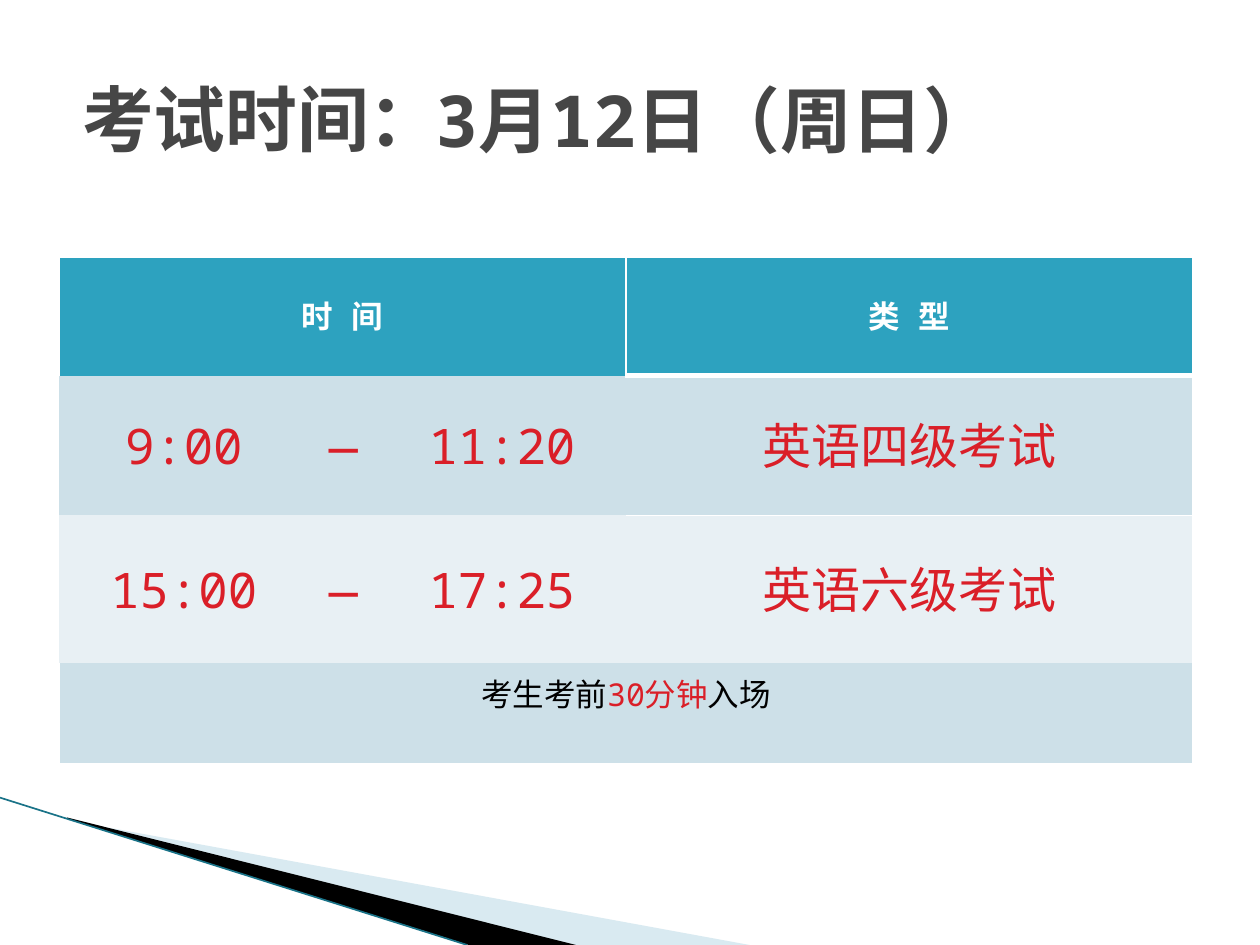
"""Build a slide with the exam timetable for 12 March."""
import pptx
import pptx.dml.color
import pptx.enum.shapes
import pptx.enum.text
import pptx.oxml
import pptx.oxml.ns
import pptx.util
from lxml import etree

Cm = pptx.util.Cm
Pt = pptx.util.Pt
ALIGN = pptx.enum.text.PP_ALIGN
MIDDLE = pptx.enum.text.MSO_ANCHOR.MIDDLE
FONT = "Noto Sans Mono"
WHITE, BLACK, GREY, RED = "FFFFFF", "000000", "464646", "DA1F28"
TEAL, BAND, PALE = "2DA2BF", "CDE0E8", "E8F0F4"

TITLE = "考试时间："
DATE = "3月12日（周日）"
HEAD = ["时 间", None, None, "类 型"]
SLOTS = [
    ["9:00", "—", "11:20", "英语四级考试"],
    ["15:00", "—", "17:25", "英语六级考试"],
]
NOTE = [("考生考前", BLACK), ("30分钟", RED), ("入场", BLACK)]
COLS = [5.03, 1.4, 5, 11.43]
ROWS = [2.39, 2.82, 2.97, 2.03]
FILLS = [TEAL, BAND, PALE, BAND]
EDGES = [
    [{"L": 1, "T": 1, "R": 1}] * 3 + [{"L": 1, "T": 1, "R": 1, "B": 3}],
    [{}] * 3 + [{"T": 3, "R": 1, "B": 1}],
    [{}] + [{"B": 1}] * 2 + [{"T": 1, "R": 1, "B": 1}],
    [{"L": 1, "R": 1, "B": 1}] * 4,
]
WEDGES = [
    ("A0CBDC", 40, [(1.4, 16.54), (15.11, 19.05), (11.58, 19.05), (1.4, 16.51)]),
    (BLACK, 100, [(1.35, 16.48), (11.61, 19.05), (9.45, 19.05), (1.37, 16.51)]),
]


def rgb(code):
    return pptx.dml.color.RGBColor.from_string(code)


def write(frame, text, size=18, color=BLACK, bold=False, align=ALIGN.CENTER):
    para = frame.paragraphs[0]
    para.alignment = align
    for part, tint in [(text, color)] if isinstance(text, str) else text:
        run = para.add_run()
        run.text = part
        font = run.font
        font.name, font.size, font.bold = FONT, Pt(size), bold
        font.color.rgb = rgb(tint)
        for tag in ("a:ea", "a:cs"):
            node = etree.SubElement(run._r.get_or_add_rPr(), pptx.oxml.ns.qn(tag))
            node.set("typeface", FONT)


def edge(cell, widths):
    props = cell._tc.get_or_add_tcPr()
    for side in "LRTB":
        line = etree.SubElement(props, pptx.oxml.ns.qn("a:ln" + side))
        if side in widths:
            line.set("w", str(Pt(widths[side])))
            fill = etree.SubElement(line, pptx.oxml.ns.qn("a:solidFill"))
            etree.SubElement(fill, pptx.oxml.ns.qn("a:srgbClr")).set("val", WHITE)
        else:
            etree.SubElement(line, pptx.oxml.ns.qn("a:noFill"))


def wedge(shapes, color, alpha, spots):
    points = [(Cm(x), Cm(y)) for x, y in spots]
    pen = shapes.build_freeform(*points[0])
    pen.add_line_segments(points[1:])
    shape = pen.convert_to_shape()
    shape.shadow.inherit = False
    shape.line.fill.background()
    shape.fill.solid()
    shape.fill.fore_color.rgb = rgb(color)
    if alpha < 100:
        tint = shape._element.spPr.find(".//" + pptx.oxml.ns.qn("a:srgbClr"))
        etree.SubElement(tint, pptx.oxml.ns.qn("a:alpha")).set("val", str(alpha * 1000))


def decorate(shapes):
    for item in WEDGES:
        wedge(shapes, *item)
    kind = pptx.enum.shapes.MSO_CONNECTOR.STRAIGHT
    rule = shapes.add_connector(kind, Cm(0), Cm(16.08), Cm(9.42), Cm(19.05))
    rule.line.color.rgb = rgb("1A7388")
    rule.line.width = Pt(0.95)
    etree.SubElement(rule._element.spPr, pptx.oxml.ns.qn("a:effectLst"))


def timetable(shapes):
    frame = shapes.add_table(len(ROWS), len(COLS), Cm(1.19), Cm(5.18),
                             Cm(sum(COLS)), Cm(sum(ROWS)))
    table = frame.table
    for col, width in zip(table.columns, COLS):
        col.width = Cm(width)
    for row, height in zip(table.rows, ROWS):
        row.height = Cm(height)
    table.cell(0, 0).merge(table.cell(0, 2))
    table.cell(3, 0).merge(table.cell(3, 3))
    looks = [dict(color=WHITE, bold=True)] + [dict(size=28, color=RED)] * 2 + [{}]
    grid = [HEAD, *SLOTS, [NOTE, None, None, None]]
    for r, texts in enumerate(grid):
        for c, text in enumerate(texts):
            cell = table.cell(r, c)
            cell.vertical_anchor = MIDDLE
            edge(cell, EDGES[r][c])
            cell.fill.solid()
            cell.fill.fore_color.rgb = rgb(FILLS[r])
            if text:
                write(cell.text_frame, text, **looks[r])
    table.cell(3, 0).margin_bottom = Cm(0.89)


def main():
    deck = pptx.Presentation()
    deck.slide_width, deck.slide_height = Cm(25.4), Cm(19.05)
    slide = deck.slides.add_slide(deck.slide_layouts[5])
    shapes = slide.shapes
    decorate(shapes)
    timetable(shapes)
    look = dict(size=41, color=GREY, bold=True, align=ALIGN.LEFT)
    title = shapes.title
    title.left, title.top, title.width, title.height = Cm(1.4), Cm(0.79), Cm(22.86), Cm(3.18)
    title.text_frame.vertical_anchor = MIDDLE
    write(title.text_frame, TITLE, **look)
    date = shapes.add_textbox(Cm(8.53), Cm(1.4), Cm(13.11), Cm(2.01))
    date.text_frame.word_wrap = True
    write(date.text_frame, DATE, **look)
    deck.save("out.pptx")


if __name__ == "__main__":
    main()
